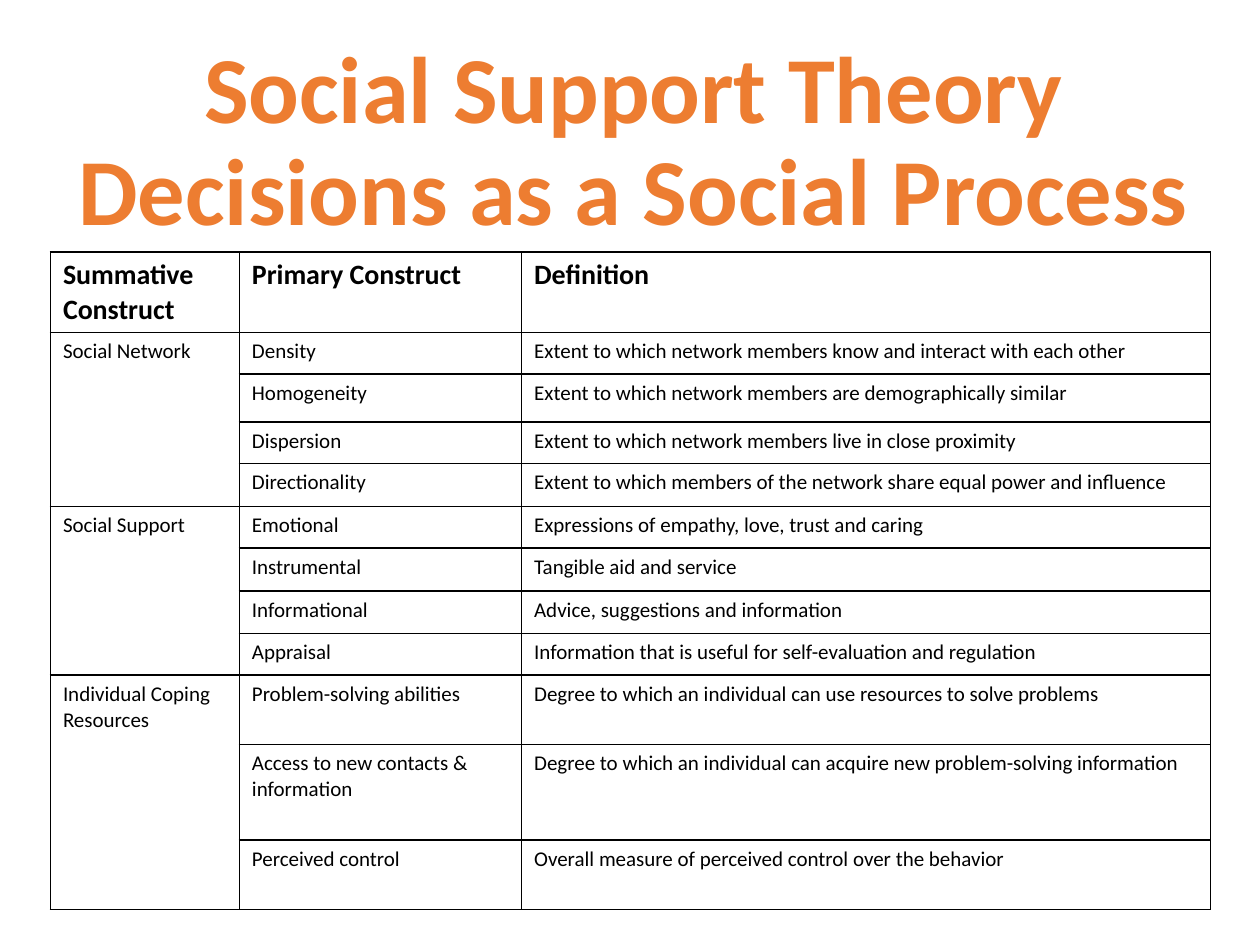
from lxml import etree
from pptx import Presentation
from pptx.dml.color import RGBColor
from pptx.enum.text import MSO_ANCHOR, PP_ALIGN
from pptx.oxml.ns import qn
from pptx.util import Inches, Pt

CENTER, LEFT = PP_ALIGN.CENTER, PP_ALIGN.LEFT
TOP = MSO_ANCHOR.TOP
ORANGE, BLACK, WHITE = "ED7D31", "000000", "FFFFFF"

HEADINGS = ["Summative Construct", "Primary Construct", "Definition"]
CONSTRUCTS = {
    "Social Network": [
        ("Density", "Extent to which network members know and interact with each other"),
        ("Homogeneity", "Extent to which network members are demographically similar"),
        ("Dispersion", "Extent to which network members live in close proximity"),
        ("Directionality",
         "Extent to which members of the network share equal power and influence"),
    ],
    "Social Support": [
        ("Emotional", "Expressions of empathy, love, trust and caring"),
        ("Instrumental", "Tangible aid and service"),
        ("Informational", "Advice, suggestions and information"),
        ("Appraisal", "Information that is useful for self-evaluation and regulation"),
    ],
    "Individual Coping Resources": [
        ("Problem-solving abilities",
         "Degree to which an individual can use resources to solve problems"),
        ("Access to new contacts & information",
         "Degree to which an individual can acquire new problem-solving information"),
        ("Perceived control", "Overall measure of perceived control over the behavior"),
    ],
}
COLUMN_WIDTHS = [1.5, 2.24, 5.47]
ROW_HEIGHTS = [0.64, 0.33, 0.38, 0.33, 0.34, 0.33, 0.34, 0.34, 0.33, 0.55, 0.76, 0.55]


def rgb(hex_color):
    return RGBColor.from_string(hex_color)


def write_text(frame, text, size=12, color=BLACK, bold=False, align=LEFT, spacing=None):
    paragraph = frame.paragraphs[0]
    paragraph.text = text
    paragraph.alignment = align
    paragraph.line_spacing = spacing
    for run in paragraph.runs:
        run.font.name = "Calibri"
        run.font.size = Pt(size)
        run.font.bold = bold
        run.font.color.rgb = rgb(color)


def style_cell(cell):
    """Give the cell a thin black border on every side and a white fill."""
    properties = cell._tc.get_or_add_tcPr()
    for side in ("a:lnL", "a:lnR", "a:lnT", "a:lnB"):
        border = etree.SubElement(properties, qn(side), w=str(Pt(1)))
        fill = etree.SubElement(border, qn("a:solidFill"))
        etree.SubElement(fill, qn("a:srgbClr"), val=BLACK)
    cell.fill.solid()
    cell.fill.fore_color.rgb = rgb(WHITE)


def add_title(slide, left, top, width, height):
    title = slide.shapes.add_textbox(left, top, width, height).text_frame
    title.word_wrap = True
    title.vertical_anchor = TOP
    write_text(title, "Social Support Theory\vDecisions as a Social Process",
               size=54, color=ORANGE, bold=True, align=CENTER, spacing=0.9)


def add_construct_table(slide, left, top, width, height):
    table = slide.shapes.add_table(
        len(ROW_HEIGHTS), len(COLUMN_WIDTHS), left, top, width, height).table
    table.horz_banding = False
    for column, share in zip(table.columns, COLUMN_WIDTHS):
        column.width = int(width * share / sum(COLUMN_WIDTHS))
    for row, share in zip(table.rows, ROW_HEIGHTS):
        row.height = int(height * share / sum(ROW_HEIGHTS))
    for cell in table.iter_cells():
        style_cell(cell)

    for column, heading in enumerate(HEADINGS):
        write_text(table.cell(0, column).text_frame, heading, size=16, bold=True)
    first = 1
    for summative, primaries in CONSTRUCTS.items():
        summative_cell = table.cell(first, 0)
        summative_cell.merge(table.cell(first + len(primaries) - 1, 0))
        write_text(summative_cell.text_frame, summative)
        for row, (primary, definition) in enumerate(primaries, first):
            write_text(table.cell(row, 1).text_frame, primary)
            write_text(table.cell(row, 2).text_frame, definition)
        first += len(primaries)


def main():
    presentation = Presentation()
    presentation.slide_width = Inches(10)
    presentation.slide_height = Inches(7.5)
    slide = presentation.slides.add_slide(presentation.slide_layouts[6])
    add_title(slide, Inches(0.5), Inches(0.28), Inches(9.06), Inches(1.62))
    add_construct_table(slide, Inches(0.4), Inches(2), Inches(sum(COLUMN_WIDTHS)),
                        Inches(sum(ROW_HEIGHTS)))
    presentation.save("out.pptx")


if __name__ == "__main__":
    main()
